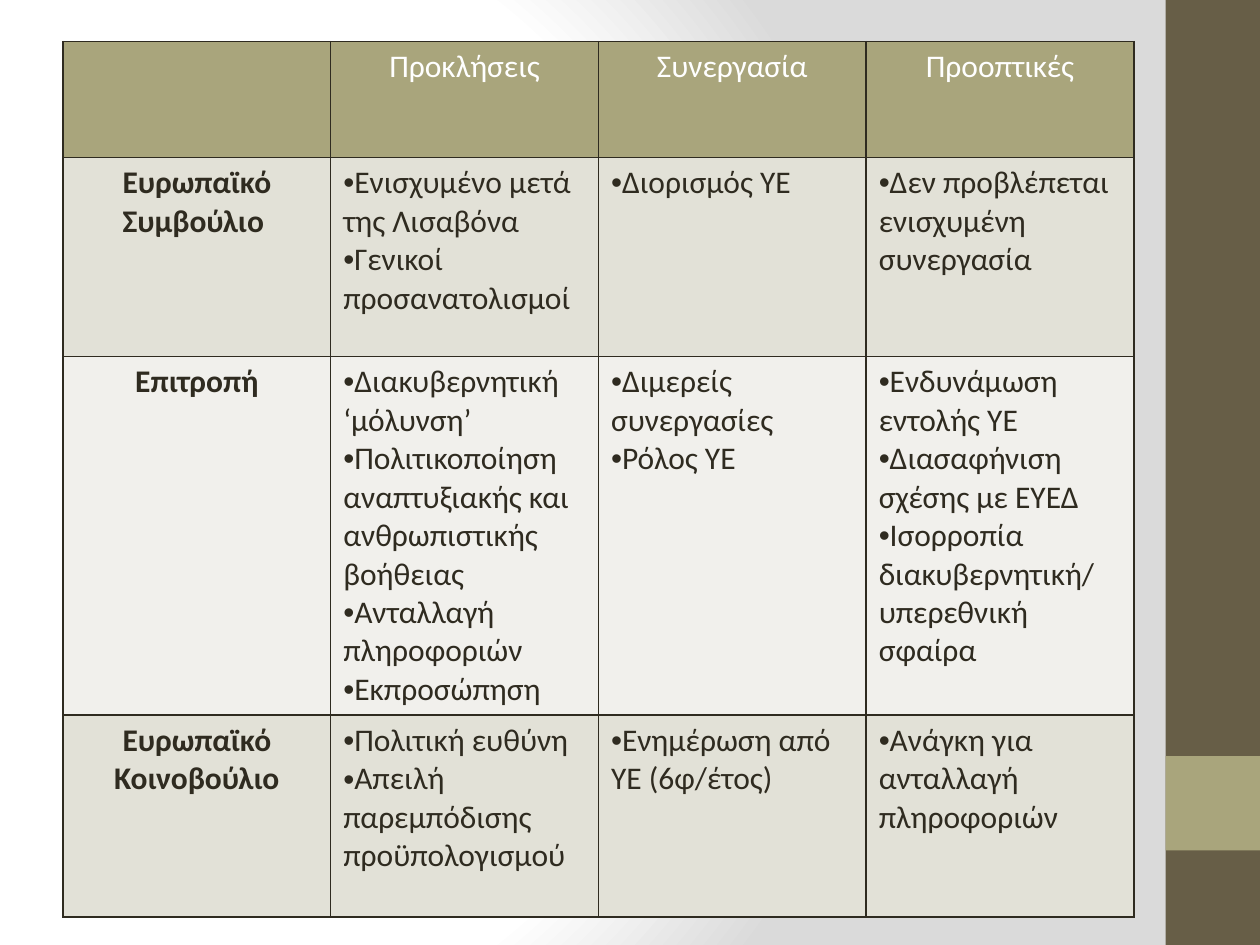
from pptx import Presentation
from pptx.dml.color import RGBColor as RGB
from pptx.enum.shapes import MSO_SHAPE as SHAPE
from pptx.enum.text import PP_ALIGN as ALIGN
from pptx.oxml import parse_xml
from pptx.oxml.ns import nsdecls, qn
from pptx.util import Inches, Pt

COLORS = {
    "ink": "2F2B20",
    "white": "FFFFFF",
    "shade": "DADADA",
    "band": "675E47",
    "accent": "A9A57C",
    "odd": "E2E1D7",
    "even": "F1F0EC",
}
FONT, SIZE = "Calibri", 18

HEADERS = ["", "Προκλήσεις", "Συνεργασία", "Προοπτικές"]
BODY = [
    ("Ευρωπαϊκό Συμβούλιο ",
     ["Ενισχυμένο μετά της Λισαβόνα", "Γενικοί προσανατολισμοί"],
     ["Διορισμός ΥΕ"],
     ["Δεν προβλέπεται ενισχυμένη συνεργασία"]),
    ("Επιτροπή",
     ["Διακυβερνητική ‘μόλυνση’",
      "Πολιτικοποίηση αναπτυξιακής και ανθρωπιστικής βοήθειας",
      "Ανταλλαγή πληροφοριών", "Εκπροσώπηση"],
     ["Διμερείς συνεργασίες", "Ρόλος ΥΕ"],
     ["Ενδυνάμωση εντολής ΥΕ", "Διασαφήνιση σχέσης με ΕΥΕΔ",
      "Ισορροπία διακυβερνητική/ υπερεθνική σφαίρα"]),
    ("Ευρωπαϊκό Κοινοβούλιο",
     ["Πολιτική ευθύνη", "Απειλή παρεμπόδισης προϋπολογισμού"],
     ["Ενημέρωση από ΥΕ (6φ/έτος)"],
     ["Ανάγκη για ανταλλαγή πληροφοριών"]),
]
ROW_HEIGHTS = [0.92, 1.58, 2.8, 1.6]
TABLE_LEFT, TABLE_TOP, TABLE_WIDTH = 0.5, 0.33, 8.5
SIDE_BLOCKS = [(0, 7.5, "band"), (6, 0.75, "accent")]
SIDE_LEFT, SIDE_WIDTH = 9.25, 0.75
GRADIENT = [(0, "white"), (75, "white"), (100, "shade")]


def set_background(s):
    s.background.fill.gradient()
    grad = next(s.element.iter(qn("a:gradFill")))
    stops = "".join(
        f'<a:gs pos="{pos * 1000}"><a:srgbClr val="{COLORS[color]}"/></a:gs>'
        for pos, color in GRADIENT)
    grad.getparent().replace(grad, parse_xml(
        f'<a:gradFill {nsdecls("a")} rotWithShape="1"><a:gsLst>{stops}</a:gsLst>'
        '<a:path path="circle"><a:fillToRect l="20000" t="50000" r="100000" b="50000"/>'
        '</a:path></a:gradFill>'))


def add_side_block(s, top, height, color):
    sp = s.shapes.add_shape(SHAPE.RECTANGLE, Inches(SIDE_LEFT), Inches(top),
                            Inches(SIDE_WIDTH), Inches(height))
    sp.shadow.inherit = False
    sp.fill.solid()
    sp.fill.fore_color.rgb = RGB.from_string(COLORS[color])
    sp.line.fill.background()


def add_bullet(p):
    pPr = p._p.get_or_add_pPr()
    pPr.set("marL", "0")
    pPr.set("indent", "0")
    pPr.append(parse_xml(f'<a:buFont {nsdecls("a")} typeface="Arial"/>'))
    pPr.append(parse_xml(f'<a:buChar {nsdecls("a")} char="•"/>'))


def style_cell(cell, fill):
    tcPr = cell._tc.get_or_add_tcPr()
    for side in ("lnL", "lnR", "lnT", "lnB"):
        tcPr.append(parse_xml(
            f'<a:{side} {nsdecls("a")} w="{Pt(1)}"><a:solidFill>'
            f'<a:srgbClr val="{COLORS["ink"]}"/></a:solidFill></a:{side}>'))
    cell.fill.solid()
    cell.fill.fore_color.rgb = RGB.from_string(COLORS[fill])


def fill_cell(cell, content, color, bold):
    bulleted = isinstance(content, list)
    cell.text_frame.text = "\n".join(content) if bulleted else content
    for p in cell.text_frame.paragraphs:
        if bulleted:
            add_bullet(p)
        else:
            p.alignment = ALIGN.CENTER
        for r in p.runs:
            r.font.name, r.font.size, r.font.bold = FONT, Pt(SIZE), bold
            r.font.color.rgb = RGB.from_string(COLORS[color])


def add_matrix(s):
    rows = [HEADERS, *BODY]
    table = s.shapes.add_table(
        len(rows), len(HEADERS), Inches(TABLE_LEFT), Inches(TABLE_TOP),
        Inches(TABLE_WIDTH), Inches(sum(ROW_HEIGHTS))).table
    for col in table.columns:
        col.width = Inches(TABLE_WIDTH / len(HEADERS))
    for i, (row, height) in enumerate(zip(rows, ROW_HEIGHTS)):
        table.rows[i].height = Inches(height)
        fill = "accent" if i == 0 else ("odd" if i % 2 else "even")
        for j, content in enumerate(row):
            cell = table.cell(i, j)
            style_cell(cell, fill)
            fill_cell(cell, content, "ink" if i else "white", i > 0 and j == 0)


def main():
    prs = Presentation()
    prs.slide_width, prs.slide_height = Inches(10), Inches(7.5)
    s = prs.slides.add_slide(prs.slide_layouts[6])
    set_background(s)
    for block in SIDE_BLOCKS:
        add_side_block(s, *block)
    add_matrix(s)
    prs.save("out.pptx")


if __name__ == "__main__":
    main()
